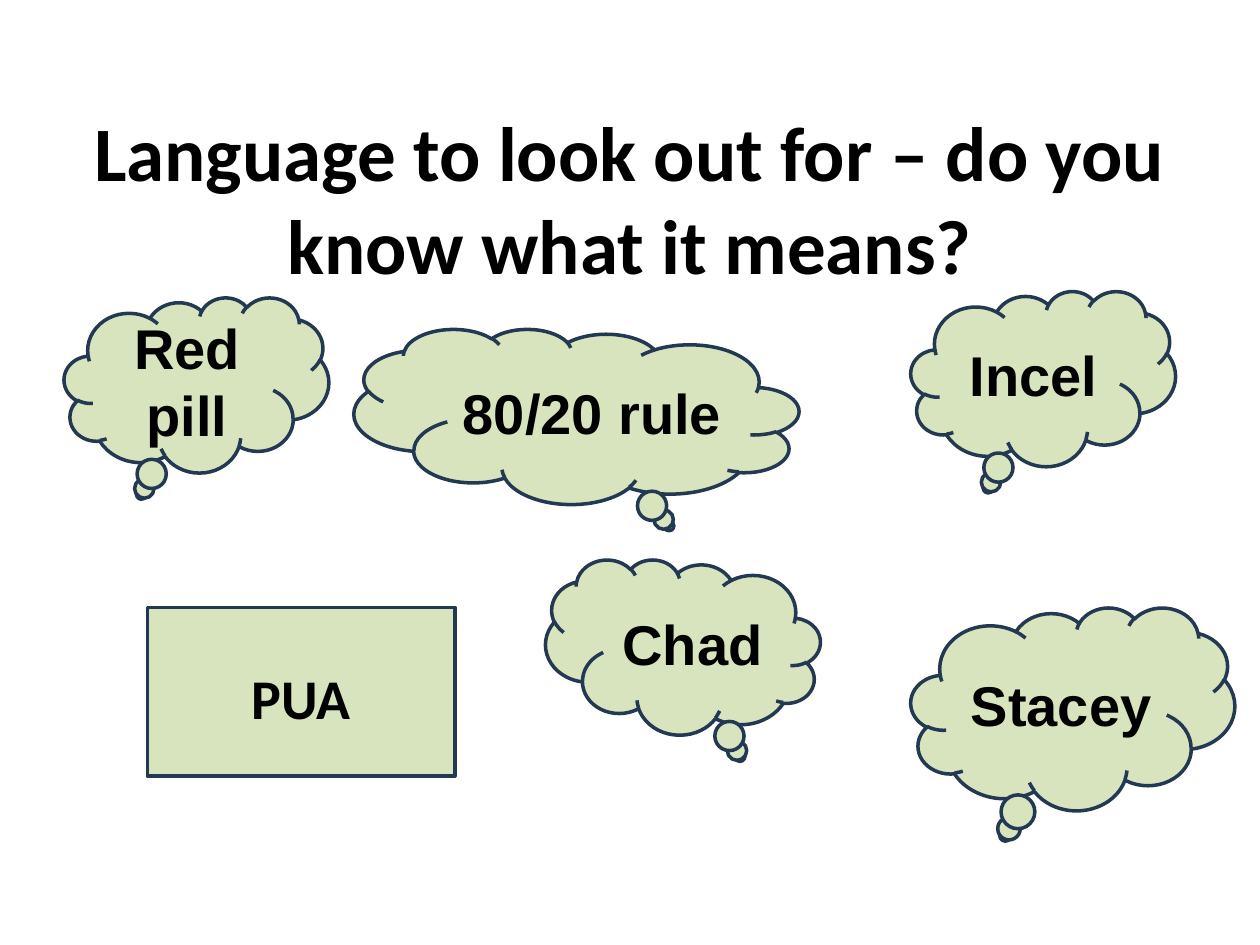
from pptx import Presentation
from pptx.dml.color import RGBColor
from pptx.enum.shapes import MSO_SHAPE as Shape
from pptx.enum.text import MSO_ANCHOR as Anchor, PP_ALIGN as Align
from pptx.util import Inches, Pt

COLORS = {"text": "000000", "fill": "D7E4BD", "line": "233953"}


def write_text(shape, text, font="Arial", size=32, inset=0.1, top=0.05, bottom=0.05):
    frame = shape.text_frame
    frame.word_wrap = True
    frame.vertical_anchor = Anchor.MIDDLE
    frame.margin_left = frame.margin_right = Inches(inset)
    frame.margin_top, frame.margin_bottom = Inches(top), Inches(bottom)
    paragraph = frame.paragraphs[0]
    paragraph.alignment = Align.CENTER
    run = paragraph.add_run()
    run.text = text
    run.font.name = font
    run.font.size = Pt(size)
    run.font.bold = True
    run.font.color.rgb = RGBColor.from_string(COLORS["text"])


def add_panel(kind, left, top, width, height):
    shape = slide.shapes.add_shape(
        kind, Inches(left), Inches(top), Inches(width), Inches(height))
    shape.shadow.inherit = False
    shape.fill.solid()
    shape.fill.fore_color.rgb = RGBColor.from_string(COLORS["fill"])
    shape.line.color.rgb = RGBColor.from_string(COLORS["line"])
    shape.line.width = Pt(2)
    return shape


presentation = Presentation()
presentation.slide_width = Inches(10)
presentation.slide_height = Inches(7.5)
slide = presentation.slides.add_slide(presentation.slide_layouts[6])

# Title
title = slide.shapes.add_textbox(Inches(0.51), Inches(0.76), Inches(8.98), Inches(1.61))
write_text(title, "Language to look out for – do you know what it means?",
           font="Calibri", size=44, top=0.1, bottom=0.1)

# Rectangle term, its text set slightly below the middle
rectangle = add_panel(Shape.RECTANGLE, 1.17, 4.82, 2.44, 1.34)
write_text(rectangle, "PUA", font="Calibri", top=0.19, bottom=0.1)

# Thought clouds: text, left, top, width, height, mirrored
clouds = [
    ("Incel", 7.23, 2.31, 2.1, 1.39, False),
    ("Red pill", 0.51, 2.36, 2.1, 1.39, False),
    ("80/20 rule", 2.81, 2.61, 3.53, 1.39, True),
    ("Chad", 4.33, 4.44, 2.18, 1.39, True),
    ("Stacey", 7.23, 4.82, 2.57, 1.61, False),
]
for term, left, top, width, height, mirrored in clouds:
    cloud = add_panel(Shape.CLOUD_CALLOUT, left, top, width, height)
    if mirrored:
        cloud._element.spPr.xfrm.set("flipH", "1")
    write_text(cloud, term)

presentation.save("out.pptx")
